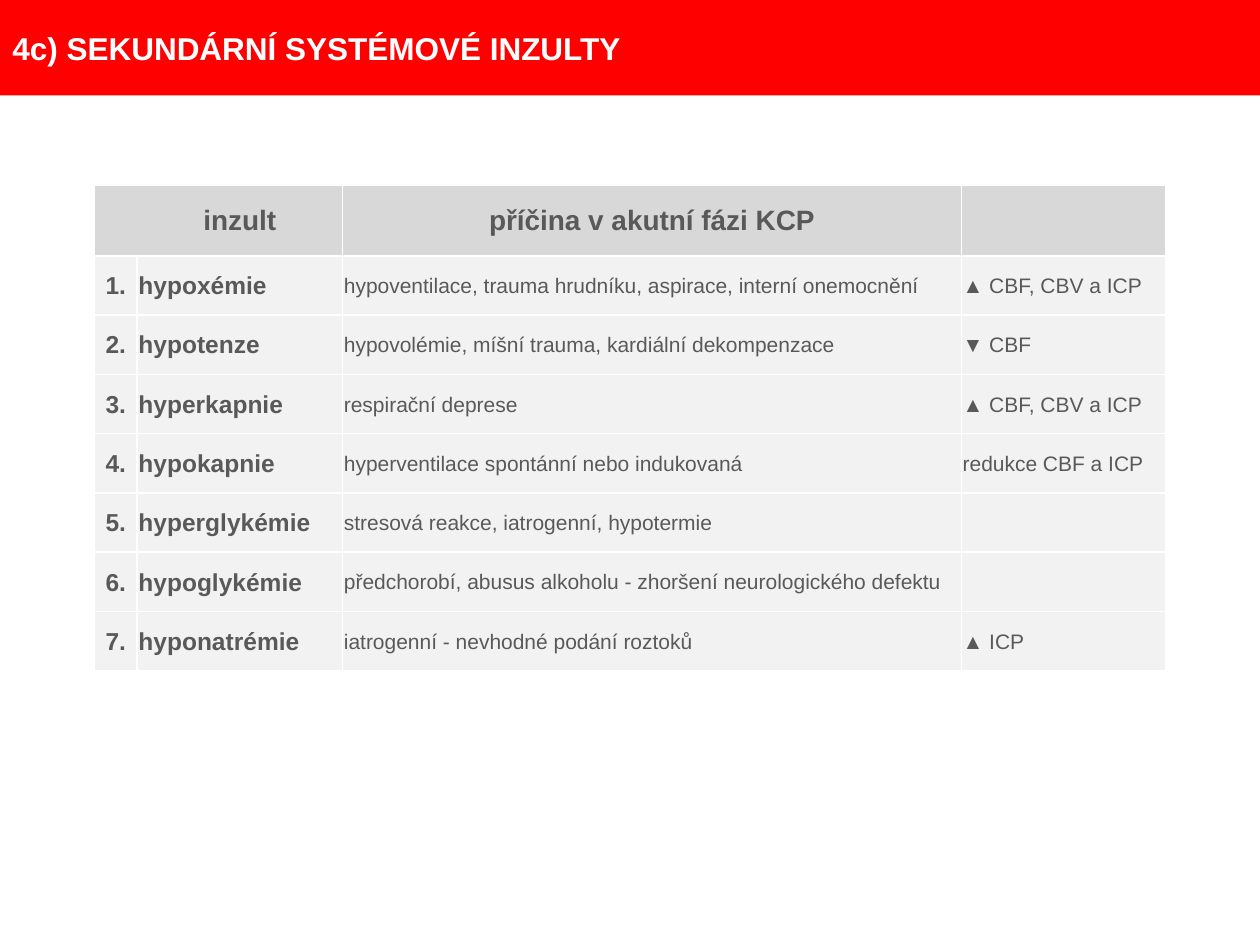
from dataclasses import dataclass

from lxml.etree import SubElement
from pptx import Presentation
from pptx.dml.color import RGBColor as Color
from pptx.enum.shapes import MSO_SHAPE as Shape
from pptx.enum.text import MSO_ANCHOR as Anchor, PP_ALIGN as Align
from pptx.oxml.ns import qn
from pptx.util import Pt


@dataclass(frozen=True)
class Theme:
    font: str = "Arial"
    banner: str = "FF0000"
    white: str = "FFFFFF"
    text: str = "595959"
    header_fill: str = "D8D8D8"
    body_fill: str = "F2F2F2"
    title_size: int = 18
    header_size: int = 16
    label_size: int = 14
    body_size: int = 12


TITLE = "4c) SEKUNDÁRNÍ SYSTÉMOVÉ INZULTY"
HEADER = ("", "inzult", "příčina v akutní fázi KCP", "")
INSULTS = [
    ("hypoxémie", "hypoventilace, trauma hrudníku, aspirace, interní onemocnění",
     "▲ CBF, CBV a ICP"),
    ("hypotenze", "hypovolémie, míšní trauma, kardiální dekompenzace", "▼ CBF"),
    ("hyperkapnie", "respirační deprese", "▲ CBF, CBV a ICP"),
    ("hypokapnie", "hyperventilace spontánní nebo indukovaná", "redukce CBF a ICP"),
    ("hyperglykémie", "stresová reakce, iatrogenní, hypotermie", ""),
    ("hypoglykémie", "předchorobí, abusus alkoholu - zhoršení neurologického defektu", ""),
    ("hyponatrémie", "iatrogenní - nevhodné podání roztoků", "▲ ICP"),
]
COLUMN_WIDTHS = (24.4, 117.4, 353.6, 116.6)
HEADER_HEIGHT, ROW_HEIGHT = 40.2, 33.9


class SlideBuilder:
    def __init__(self, slide, theme):
        self.slide = slide
        self.theme = theme

    def add_run(self, paragraph, text, size, color, bold):
        run = paragraph.add_run()
        run.text = text
        font = run.font
        font.name, font.size, font.bold = self.theme.font, Pt(size), bold
        font.color.rgb = Color.from_string(color)

    def add_banner(self, text, width, height):
        shape = self.slide.shapes.add_shape(Shape.RECTANGLE, 0, 0, Pt(width), Pt(height))
        shape.shadow.inherit = False
        shape.fill.solid()
        shape.fill.fore_color.rgb = Color.from_string(self.theme.banner)
        shape.line.fill.background()
        frame = shape.text_frame
        frame.word_wrap = True
        frame.vertical_anchor = Anchor.MIDDLE
        paragraph = frame.paragraphs[0]
        paragraph.alignment = Align.LEFT
        self.add_run(paragraph, text, self.theme.title_size, self.theme.white, True)

    def set_borders(self, cell, open_side):
        """Draw white cell borders, leaving open_side without a line."""
        properties = cell._tc.get_or_add_tcPr()
        for index, side in enumerate(("L", "R", "T", "B")):
            line = SubElement(properties, qn(f"a:ln{side}"), w=str(Pt(1)))
            if side == open_side:
                SubElement(line, qn("a:noFill"))
            else:
                fill = SubElement(line, qn("a:solidFill"))
                SubElement(fill, qn("a:srgbClr"), val=self.theme.white)
            properties.insert(index, line)

    def fill_cell(self, cell, text, fill, size, bold, centred, open_side=None):
        cell.fill.solid()
        cell.fill.fore_color.rgb = Color.from_string(fill)
        self.set_borders(cell, open_side)
        cell.vertical_anchor = Anchor.MIDDLE
        cell.margin_left = cell.margin_right = cell.margin_top = Pt(0.75)
        cell.margin_bottom = 0
        if text:
            paragraph = cell.text_frame.paragraphs[0]
            paragraph.alignment = Align.CENTER if centred else Align.LEFT
            self.add_run(paragraph, text, size, self.theme.text, bold)

    def add_insult_table(self, left, top):
        theme = self.theme
        heights = [HEADER_HEIGHT] + [ROW_HEIGHT] * len(INSULTS)
        table = self.slide.shapes.add_table(
            len(heights), len(COLUMN_WIDTHS), Pt(left), Pt(top),
            Pt(sum(COLUMN_WIDTHS)), Pt(sum(heights))).table
        for column, width in zip(table.columns, COLUMN_WIDTHS):
            column.width = Pt(width)
        for row, height in zip(table.rows, heights):
            row.height = Pt(height)

        open_sides = ("R", "L", None, None)
        for column, (text, side) in enumerate(zip(HEADER, open_sides)):
            self.fill_cell(table.cell(0, column), text, theme.header_fill,
                           theme.header_size, True, True, side)
        for number, insult in enumerate(INSULTS, 1):
            for column, text in enumerate((f"{number}.", *insult)):
                is_label = column < 2
                size = theme.label_size if is_label else theme.body_size
                self.fill_cell(table.cell(number, column), text, theme.body_fill,
                               size, is_label, column == 0)


def main():
    presentation = Presentation()
    presentation.slide_width, presentation.slide_height = Pt(720), Pt(540)
    slide = presentation.slides.add_slide(presentation.slide_layouts[6])
    builder = SlideBuilder(slide, Theme())
    builder.add_banner(TITLE, 720, 54.5)
    builder.add_insult_table(54, 106)
    presentation.save("out.pptx")


if __name__ == "__main__":
    main()
